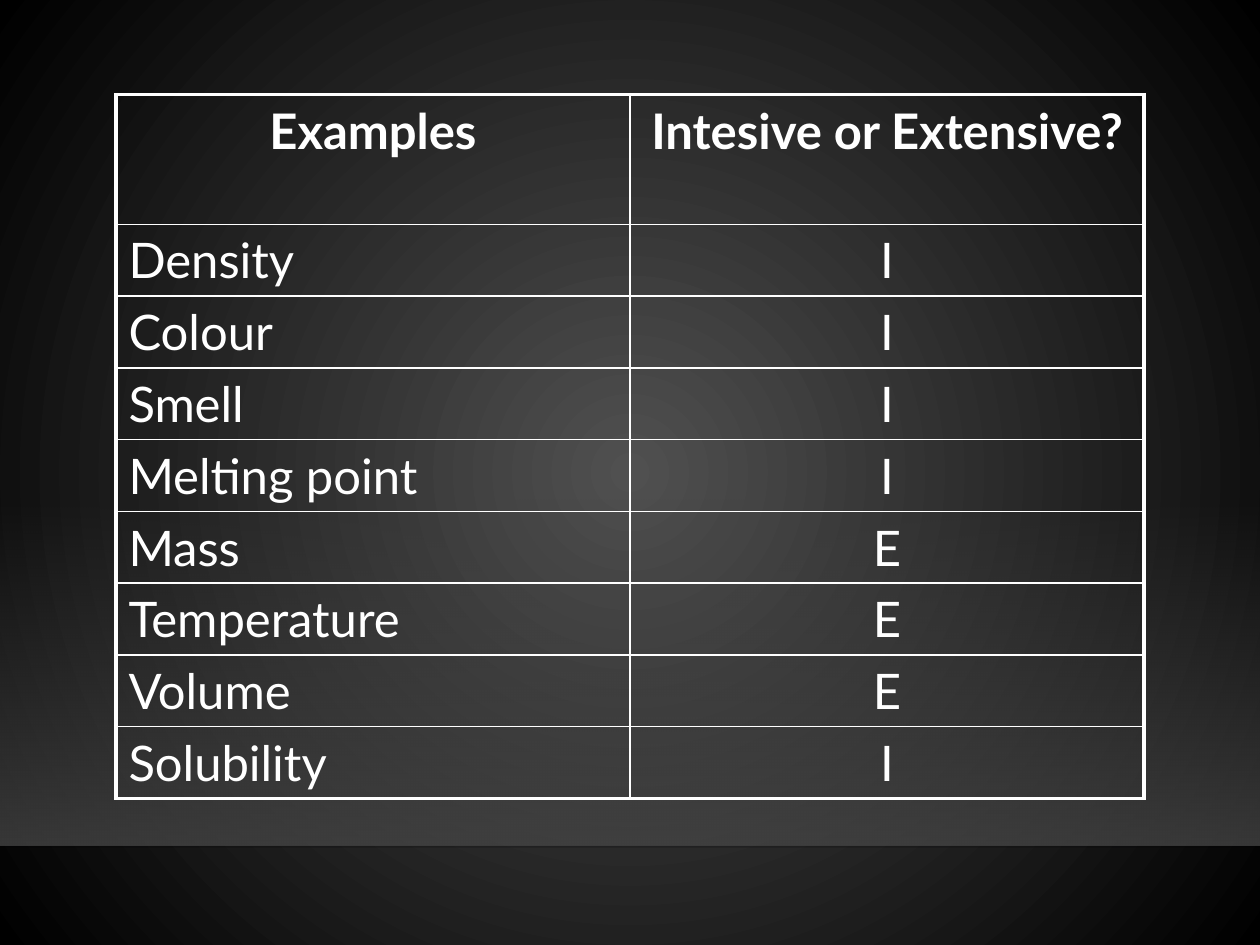
"""Build a slide with a table of intensive and extensive properties."""
from lxml.etree import SubElement
from pptx import Presentation
from pptx.dml.color import RGBColor
from pptx.enum.shapes import MSO_CONNECTOR, MSO_SHAPE
from pptx.enum.text import PP_ALIGN
from pptx.oxml.ns import qn
from pptx.util import Inches, Pt

WHITE = RGBColor(0xFF, 0xFF, 0xFF)
GLOW = RGBColor(0x50, 0x50, 0x50)
BLACK = RGBColor(0, 0, 0)
FLOOR = RGBColor(0x45, 0x45, 0x45)
EDGE = RGBColor(0, 0, 1)

ROWS = [
    ("Examples", "Intesive or Extensive?"),
    ("Density", "I"),
    ("Colour", "I"),
    ("Smell", "I"),
    ("Melting point", "I"),
    ("Mass", "E"),
    ("Temperature", "E"),
    ("Volume", "E"),
    ("Solubility", "I"),
]
HEAD_H, ROW_H = Inches(1.03), Inches(0.57)
COL_W = Inches(4.08)


def set_alpha(color, percent):
    SubElement(color, qn("a:alpha"), val=str(percent * 1000))


def add_border(tc_pr, side, width):
    ln = SubElement(tc_pr, qn(f"a:ln{side}"), w=str(Pt(width)))
    fill = SubElement(ln, qn("a:solidFill"))
    SubElement(fill, qn("a:srgbClr"), val=str(WHITE))


prs = Presentation()
prs.slide_width, prs.slide_height = Inches(10), Inches(7.5)
W = prs.slide_width
s = prs.slides.add_slide(prs.slide_layouts[6])

bg = s.background.fill
bg.gradient()
for stop, color in zip(bg.gradient_stops, (GLOW, BLACK)):
    stop.color.rgb = color
grad = s.element.find(".//" + qn("a:gradFill"))
grad.remove(grad.find(qn("a:lin")))
circle = SubElement(grad, qn("a:path"), path="circle")
SubElement(circle, qn("a:fillToRect"), {side: "50000" for side in "ltrb"})

floor = s.shapes.add_shape(MSO_SHAPE.RECTANGLE, 0, Inches(3.96), W, Inches(2.75))
floor.shadow.inherit = False
floor.line.fill.background()
floor.fill.gradient()
floor.fill.gradient_angle = 270
for stop in floor.fill.gradient_stops:
    stop.color.rgb = FLOOR
for color, percent in zip(floor.element.spPr.iter(qn("a:srgbClr")), (0, 80)):
    set_alpha(color, percent)

edge = s.shapes.add_connector(MSO_CONNECTOR.STRAIGHT, 0, Inches(6.72), W, Inches(6.72))
edge.line.width = Pt(1)
edge.line.color.rgb = EDGE
set_alpha(edge.element.spPr.find(".//" + qn("a:srgbClr")), 20)
SubElement(edge.element.spPr, qn("a:effectLst"))

last = len(ROWS) - 1
frame = s.shapes.add_table(len(ROWS), 2, (W - 2 * COL_W) // 2, Inches(0.75),
                           2 * COL_W, HEAD_H + last * ROW_H)
table = frame.table
table.first_row = table.horz_banding = False
for col in table.columns:
    col.width = COL_W
for i, texts in enumerate(ROWS):
    table.rows[i].height = ROW_H if i else HEAD_H
    for j, text in enumerate(texts):
        cell = table.cell(i, j)
        outer = {"L": j == 0, "R": j == 1, "T": i == 0, "B": i == last}
        tc_pr = cell._tc.get_or_add_tcPr()
        for side, is_outer in outer.items():
            add_border(tc_pr, side, 2.25 if is_outer else 1)
        cell.fill.background()
        cell.text = text
        p = cell.text_frame.paragraphs[0]
        p.alignment = PP_ALIGN.CENTER if i == 0 or j == 1 else PP_ALIGN.LEFT
        p.font.name = "Lato"
        p.font.size = Pt(28)
        p.font.bold = i == 0
        p.font.color.rgb = WHITE

prs.save("out.pptx")
